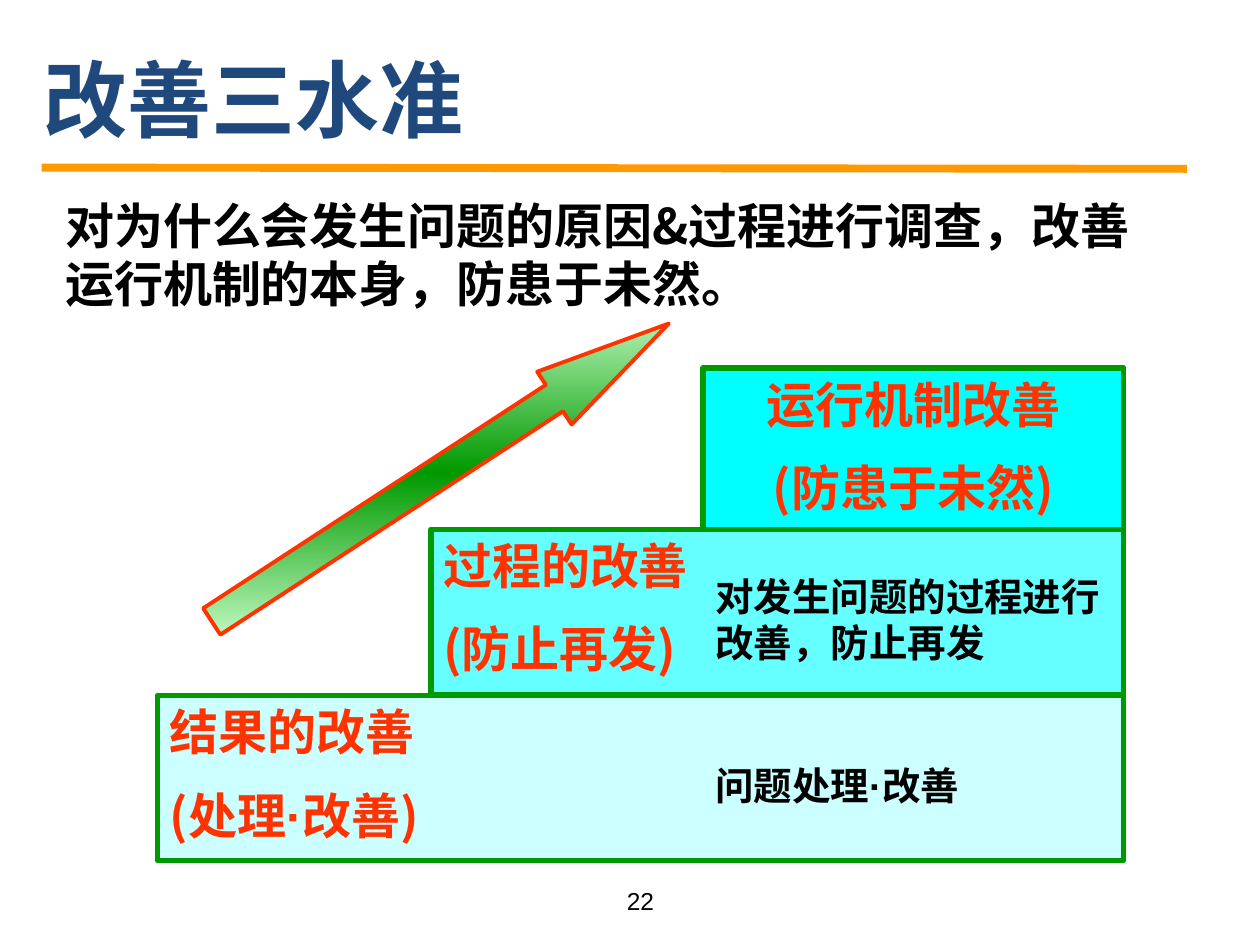
import pptx
import pptx.dml.color
import pptx.enum.shapes
import pptx.enum.text
import pptx.oxml
import pptx.oxml.ns
import pptx.util
from pptx.util import Inches, Pt

CJK, LATIN = "Noto Sans CJK SC", "Arial"
RED, GREEN, BLACK = "FF3300", "009900", "000000"
LEFT, CENTER, RIGHT = (
    pptx.enum.text.PP_ALIGN.LEFT,
    pptx.enum.text.PP_ALIGN.CENTER,
    pptx.enum.text.PP_ALIGN.RIGHT,
)
SHAPES = pptx.enum.shapes.MSO_SHAPE

# Stairs share a right edge and a height: left, top, fill, alignment, lines
STAIR_RIGHT, STAIR_HEIGHT = 8.92, 1.31
STAIRS = [
    (1.25, 5.52, "CCFFFF", LEFT, ["结果的改善", "(处理·改善)"]),
    (5.58, 2.92, "00FFFF", CENTER, ["运行机制改善", "(防患于未然)"]),
    (3.42, 4.2, "66FFFF", LEFT, ["过程的改善", "(防止再发)"]),
]

# Free text: box, line, size, colour
TEXTS = [
    ((0.25, 0.33, 9, 0.9), "改善三水准", 48, "1F497D"),
    ((0.42, 1.5, 8.83, 1.03),
     "对为什么会发生问题的原因&过程进行调查，改善运行机制的本身，防患于未然。", 28, BLACK),
    ((5.58, 6, 2.42, 0.47), "问题处理·改善", 22, BLACK),
    ((5.58, 4.5, 3.5, 0.83), "对发生问题的过程进行改善，防止再发", 22, BLACK),
]

PAGE_NUMBER = ((4.45, 6.98, 0.84, 0.52), "22")
ARROW_BOX, ARROW_TURN = (1.33, 3.5, 4.33, 0.5), 326.9
ARROW_STOPS = [(0, "CCFFCC"), (50, GREEN), (100, "CCFFCC")]
RULE = (0.33, 1.33, 9.42, 1.34)


def rgb(value):
    return pptx.dml.color.RGBColor.from_string(value)


def inches(values):
    return [Inches(value) for value in values]


def outline(shape, color, width):
    shape.line.color.rgb = rgb(color)
    shape.line.width = Pt(width)


def set_east_asian(font_props, name):
    ea = font_props.makeelement(pptx.oxml.ns.qn("a:ea"), {"typeface": name})
    font_props.find(pptx.oxml.ns.qn("a:latin")).addnext(ea)


def write(shape, lines, size, color, align=LEFT, bold=True, face=CJK):
    """Fill the shape with paragraphs; a middle dot gets its own Latin run."""
    frame = shape.text_frame
    frame.word_wrap = True
    frame.vertical_anchor = pptx.enum.text.MSO_ANCHOR.TOP
    frame.auto_size = pptx.enum.text.MSO_AUTO_SIZE.SHAPE_TO_FIT_TEXT
    for index, line in enumerate(lines):
        paragraph = frame.add_paragraph() if index else frame.paragraphs[0]
        paragraph.alignment = align
        if index:
            paragraph.space_before = Pt(size / 2)
        paragraph.font.size = Pt(size)
        paragraph.font.bold = bold
        paragraph.font.color.rgb = rgb(color)
        before, dot, after = line.partition("·")
        for text, font in ((before, face), (dot, LATIN), (after, face)):
            if text:
                run = paragraph.add_run()
                run.text = text
                run.font.name = font
                set_east_asian(run.font._element, face)


def add_stair(slide, left, top, fill, align, lines):
    box = inches((left, top, STAIR_RIGHT - left, STAIR_HEIGHT))
    stair = slide.shapes.add_shape(SHAPES.RECTANGLE, *box)
    stair.shadow.inherit = False
    stair.fill.solid()
    stair.fill.fore_color.rgb = rgb(fill)
    outline(stair, GREEN, 3)
    write(stair, lines, 28, RED, align)


def add_rising_arrow(slide):
    arrow = slide.shapes.add_shape(SHAPES.RIGHT_ARROW, *inches(ARROW_BOX))
    arrow.rotation = ARROW_TURN
    arrow.adjustments[0], arrow.adjustments[1] = 0.5, 2.167
    arrow.shadow.inherit = False
    outline(arrow, RED, 2.25)
    stops = "".join(
        f'<a:gs pos="{position * 1000}"><a:srgbClr val="{color}"/></a:gs>'
        for position, color in ARROW_STOPS
    )
    gradient = pptx.oxml.parse_xml(
        f'<a:gradFill {pptx.oxml.ns.nsdecls("a")} rotWithShape="0">'
        f'<a:gsLst>{stops}</a:gsLst><a:lin ang="5400000" scaled="1"/></a:gradFill>'
    )
    arrow._element.spPr.find(pptx.oxml.ns.qn("a:prstGeom")).addnext(gradient)


def add_rule(slide):
    rule = slide.shapes.add_connector(
        pptx.enum.shapes.MSO_CONNECTOR.STRAIGHT, *inches(RULE))
    outline(rule, "FF9900", 4.5)
    props = rule._element.spPr
    props.append(props.makeelement(pptx.oxml.ns.qn("a:effectLst"), {}))


def main():
    deck = pptx.Presentation()
    deck.slide_width, deck.slide_height = Inches(10), Inches(7.5)
    slide = deck.slides.add_slide(deck.slide_layouts[6])

    number_box, number = PAGE_NUMBER
    write(slide.shapes.add_textbox(*inches(number_box)), [number], 14, BLACK,
          RIGHT, bold=False, face=LATIN)
    for stair in STAIRS:
        add_stair(slide, *stair)
    for box, line, size, color in TEXTS:
        write(slide.shapes.add_textbox(*inches(box)), [line], size, color)
    add_rising_arrow(slide)
    add_rule(slide)
    deck.save("out.pptx")


if __name__ == "__main__":
    main()
